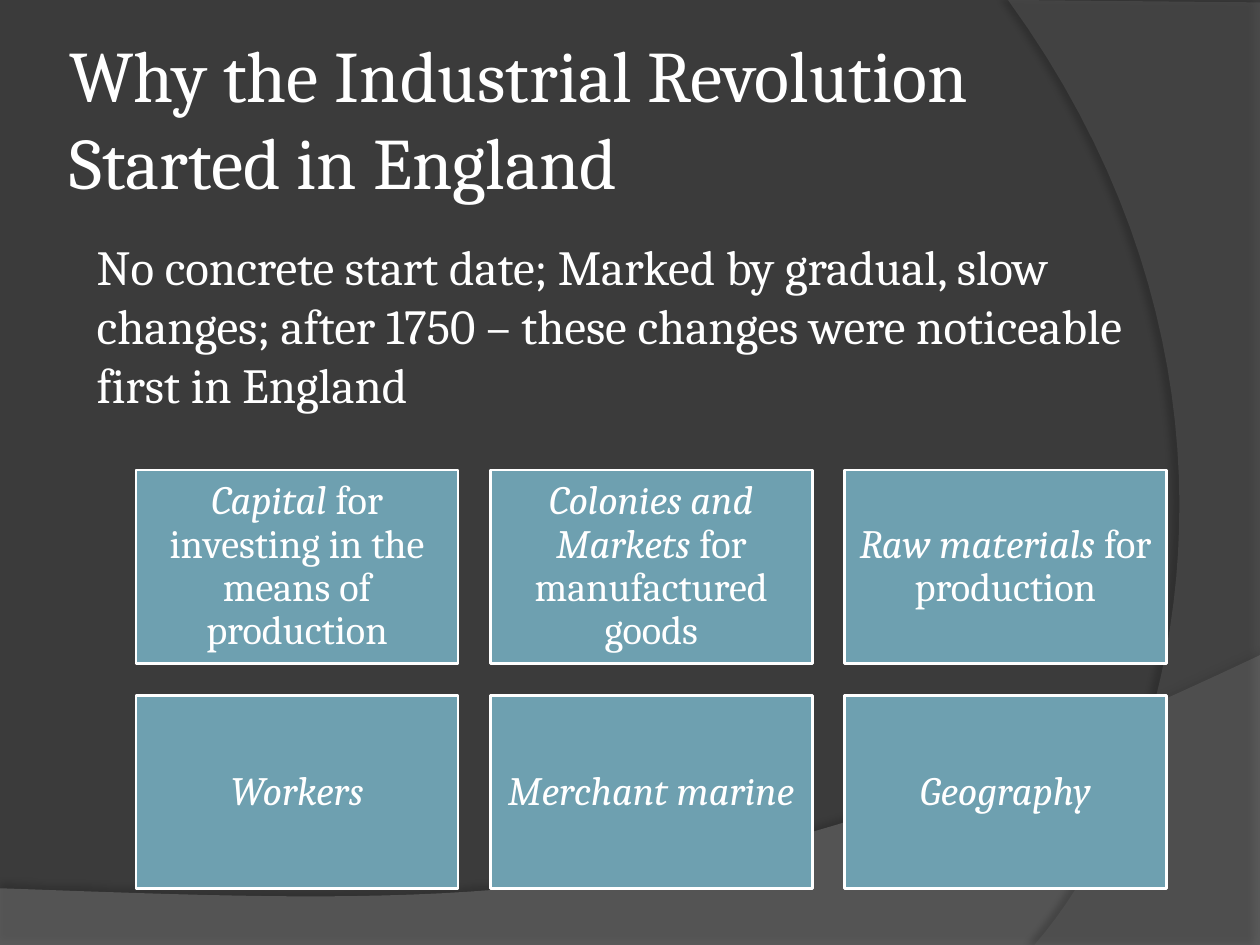
from lxml.etree import SubElement
from pptx import Presentation
from pptx.dml.color import RGBColor
from pptx.enum.shapes import MSO_SHAPE
from pptx.enum.text import MSO_ANCHOR, PP_ALIGN
from pptx.oxml.ns import qn
from pptx.util import Pt


def rgb(color):
    return RGBColor.from_string(color)


def add_run(p, text, size, italic=False):
    r = p.add_run()
    r.text = text
    r.font.name = "Cambria"
    r.font.size = Pt(size)
    r.font.italic = italic
    r.font.color.rgb = rgb("FFFFFF")


prs = Presentation()
prs.slide_width, prs.slide_height = Pt(720), Pt(540)
s = prs.slides.add_slide(prs.slide_layouts[6])
s.background.fill.solid()
s.background.fill.fore_color.rgb = rgb("3B3B3B")

swooshes = [
    ([(0, 507.6), (0, 540.5), (720, 540.5)],
     [(720, 374.4), (402.5, 524.9), (281.5, 517.7), (0, 507.6)],
     "7F7F7F", 45, 35, 3.5, 270),
    ([(720, 1.4), (720, 540)],
     [(591.1, 540), (673.2, 445.7), (733, 216), (576, 0)],
     "5E5E5E", 40, 45, 4, 180),
]
steps = 40
for corners, curve, color, alpha, shade, dist, angle in swooshes:
    points = list(corners)
    for i in range(steps + 1):
        t = i / steps
        weights = ((1 - t) ** 3, 3 * t * (1 - t) ** 2, 3 * t * t * (1 - t), t ** 3)
        points.append([sum(w * c[k] for w, c in zip(weights, curve)) for k in (0, 1)])
    points = [(Pt(x), Pt(y)) for x, y in points]
    fb = s.shapes.build_freeform(*points[0])
    fb.add_line_segments(points[1:], close=True)
    sp = fb.convert_to_shape()
    sp.shadow.inherit = False
    sp.line.fill.background()
    sp.fill.solid()
    sp.fill.fore_color.rgb = rgb(color)
    clr = sp._element.spPr.find(qn("a:solidFill"))[0]
    SubElement(clr, qn("a:alpha"), val=str(alpha * 1000))
    effects = sp._element.spPr.find(qn("a:effectLst"))
    shadow = SubElement(effects, qn("a:outerShdw"), blurRad=str(Pt(4)),
                        dist=str(Pt(dist)), dir=str(angle * 60000),
                        algn="ctr", rotWithShape="0")
    clr = SubElement(shadow, qn("a:srgbClr"), val="000000")
    SubElement(clr, qn("a:alpha"), val=str(shade * 1000))

texts = [
    ("Why the Industrial Revolution Started in England",
     (36, 21.6, 588.2, 90), 41.4, MSO_ANCHOR.MIDDLE, 3.6),
    ("No concrete start date; Marked by gradual, slow changes; after 1750 – "
     "these changes were noticeable first in England",
     (48.2, 131.8, 624.2, 108.7), 28, MSO_ANCHOR.TOP, 7.2),
]
for text, box, size, anchor, side in texts:
    tf = s.shapes.add_textbox(*[Pt(v) for v in box]).text_frame
    tf.word_wrap = True
    tf.vertical_anchor = anchor
    tf.margin_left = tf.margin_right = Pt(side)
    tf.margin_top = tf.margin_bottom = Pt(3.6)
    add_run(tf.paragraphs[0], text, size)

reasons = [
    ("Capital", " for investing in the means of production"),
    ("Colonies and Markets ", "for manufactured goods"),
    ("Raw materials ", "for production"),
    ("Workers", ""),
    ("Merchant marine", ""),
    ("Geography", ""),
]
w, h, gap = 184, 110.4, 18.4
for i, (key, rest) in enumerate(reasons):
    row, col = divmod(i, 3)
    sp = s.shapes.add_shape(MSO_SHAPE.RECTANGLE, Pt(77.8 + col * (w + gap)),
                            Pt(268.6 + row * (h + gap)), Pt(w), Pt(h))
    sp.shadow.inherit = False
    sp.fill.solid()
    sp.fill.fore_color.rgb = rgb("6EA0B0")
    sp.line.color.rgb = rgb("FFFFFF")
    sp.line.width = Pt(1.5)
    tf = sp.text_frame
    tf.word_wrap = True
    tf.vertical_anchor = MSO_ANCHOR.MIDDLE
    tf.margin_left = tf.margin_right = tf.margin_top = tf.margin_bottom = Pt(6.9)
    p = tf.paragraphs[0]
    p.alignment = PP_ALIGN.CENTER
    p.line_spacing = 0.9
    add_run(p, key, 23, True)
    if rest:
        add_run(p, rest, 23)

prs.save("out.pptx")
